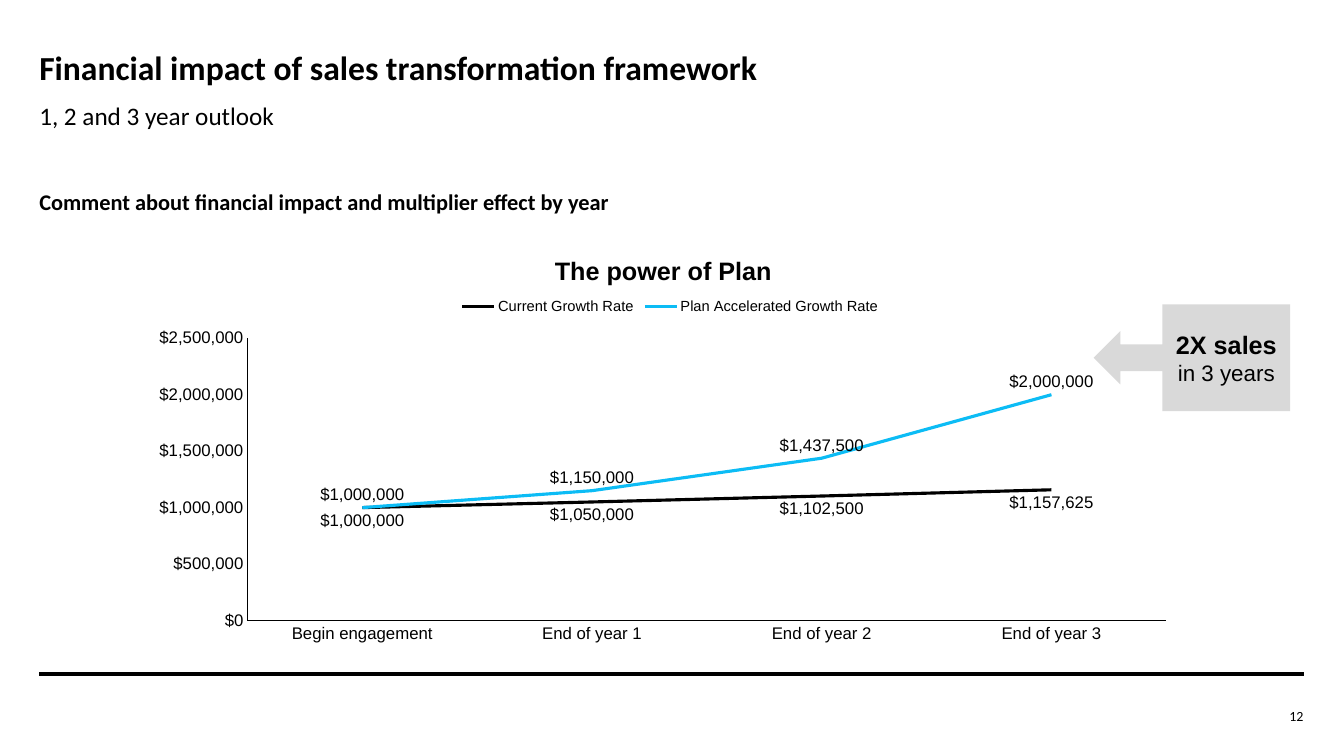
from lxml import etree
from pptx import Presentation
from pptx import util as u
from pptx.chart import data as cd
from pptx.dml import color
from pptx.enum import chart as ec
from pptx.enum import shapes, text
from pptx.oxml import ns

COLORS = {"ink": "000000", "accent": "0CBCF5", "callout": "D9D9D9"}
LEFT, WIDTH = 28.1, 903
MONEY = '"$"#,##0'
TEXTS = [
    (("Financial impact of sales transformation framework",), (LEFT, 33.8, WIDTH, 31.7),
     {"size": 24, "bold": True}, "LEFT", "TOP"),
    (("1, 2 and 3 year outlook",), (LEFT, 72, WIDTH, 31), {"size": 18}, "LEFT", "TOP"),
    (("Comment about financial impact and multiplier effect by year",),
     (LEFT, 134.6, WIDTH, 47.5), {"size": 16, "bold": True}, "LEFT", "TOP"),
    (("12",), (854.8, 503.3, 76.3, 15.8), {"size": 10}, "RIGHT", "MIDDLE"),
]
RULE_Y = 481.7
CALLOUT_BOX = (781.2, 217.4, 140.4, 76.3)
CALLOUT = [("2X sales ", {"size": 18, "bold": True}), ("in 3 years", {"size": 16, "bold": False})]
CHART_BOX = (102.2, 163.4, 745.9, 301)
CHART_TITLE = "The power of Plan"
CATEGORIES = ["Begin engagement", "End of year 1", "End of year 2", "End of year 3"]
SERIES = [
    ("Current Growth Rate", (1000000, 1050000, 1102500, 1157625), "ink", "BELOW"),
    ("Plan Accelerated Growth Rate", (1000000, 1150000, 1437500, 2000000), "accent", "ABOVE"),
]
TITLE_AT = {"x": 0.39, "y": 0.05}
LEGEND_AT = {"x": 0.3, "y": 0.16, "w": 0.41, "h": 0.05}
PLOT_AT = {"x": 0.1, "y": 0.26, "w": 0.88, "h": 0.67}


def rgb(name):
    """Return the named colour."""
    return color.RGBColor.from_string(COLORS[name])


def pts(values):
    """Turn numbers into point lengths."""
    return [u.Pt(v) for v in values]


def assign(obj, values):
    """Set attributes from a dict."""
    for key, value in values.items():
        setattr(obj, key, value)


def set_font(font, size, name="Arial", bold=False):
    """Format a font in the ink colour."""
    assign(font, {"size": u.Pt(size), "name": name, "bold": bold})
    font.color.rgb = rgb("ink")


def set_line(line, name, width):
    """Format a line."""
    line.color.rgb = rgb(name)
    line.width = u.Pt(width)


def place(layout, values, inner=False):
    """Give a chart part a manual position."""
    manual = etree.SubElement(layout, ns.qn("c:manualLayout"))
    modes = {"layoutTarget": "inner"} if inner else {}
    modes.update({"xMode": "edge", "yMode": "edge"})
    for key, value in {**modes, **values}.items():
        etree.SubElement(manual, ns.qn("c:" + key)).set("val", str(value))


def new_layout(before):
    """Insert a layout element ahead of a chart element."""
    layout = etree.Element(ns.qn("c:layout"))
    before.addprevious(layout)
    return layout


def add_text(slide, parts, box, fmt, align, anchor):
    """Add a text box without insets."""
    tf = slide.shapes.add_textbox(*pts(box)).text_frame
    assign(tf, {"word_wrap": True, "margin_left": 0, "margin_right": 0, "margin_top": 0,
                "margin_bottom": 0, "vertical_anchor": text.MSO_ANCHOR[anchor]})
    p = tf.paragraphs[0]
    p.alignment = text.PP_ALIGN[align]
    for part in parts:
        r = p.add_run()
        r.text = part
        set_font(r.font, name="Calibri", **fmt)


def add_growth_chart(slide):
    """Add the line chart of both growth rates."""
    data = cd.CategoryChartData(number_format=MONEY)
    data.categories = CATEGORIES
    for name, values, *_ in SERIES:
        data.add_series(name, values)
    chart = slide.shapes.add_chart(ec.XL_CHART_TYPE.LINE, *pts(CHART_BOX), data).chart
    set_font(chart.font, 10)
    chart.has_title = True
    title = chart.chart_title
    title.text_frame.text = CHART_TITLE
    set_font(title.text_frame.paragraphs[0].runs[0].font, 18, bold=True)
    chart.has_legend = True
    legend = chart.legend
    assign(legend, {"position": ec.XL_LEGEND_POSITION.TOP, "include_in_layout": False})
    set_font(legend.font, 10.5)
    for axis in (chart.category_axis, chart.value_axis):
        assign(axis, {"has_major_gridlines": False,
                      "major_tick_mark": ec.XL_TICK_MARK.NONE,
                      "minor_tick_mark": ec.XL_TICK_MARK.NONE})
        set_font(axis.tick_labels.font, 12)
        set_line(axis.format.line, "ink", 0.75)
    assign(chart.value_axis, {"minimum_scale": 0, "maximum_scale": 2500000, "major_unit": 500000})
    assign(chart.value_axis.tick_labels, {"number_format": MONEY, "number_format_is_linked": False})
    plot = chart.plots[0]
    plot.vary_by_categories = False
    for ser, (_, _, shade, position) in zip(plot.series, SERIES):
        ser.smooth = False
        ser.marker.style = ec.XL_MARKER_STYLE.NONE
        set_line(ser.format.line, shade, 2.25)
        labels = ser.data_labels
        assign(labels, {"show_value": True, "number_format": MONEY,
                        "number_format_is_linked": False,
                        "position": ec.XL_LABEL_POSITION[position]})
        set_font(labels.font, 12)
    root = chart.element
    for tag, values in (("title", TITLE_AT), ("legend", LEGEND_AT), ("plotArea", PLOT_AT)):
        part = root.find(".//" + ns.qn("c:" + tag))
        layout = part.find(ns.qn("c:layout"))
        if layout is None:
            follower = {"title": "overlay", "legend": "overlay", "plotArea": "lineChart"}[tag]
            layout = new_layout(part.find(ns.qn("c:" + follower)))
        place(layout, values, inner=tag == "plotArea")


def add_callout(slide):
    """Add the arrow callout beside the last point."""
    sp = slide.shapes.add_shape(shapes.MSO_SHAPE.LEFT_ARROW_CALLOUT, *pts(CALLOUT_BOX))
    sp.shadow.inherit = False
    sp.fill.solid()
    sp.fill.fore_color.rgb = rgb("callout")
    sp.line.fill.background()
    tf = sp.text_frame
    assign(tf, {"word_wrap": True, "vertical_anchor": text.MSO_ANCHOR.MIDDLE})
    p = tf.paragraphs[0]
    p.alignment = text.PP_ALIGN.CENTER
    for words, fmt in CALLOUT:
        r = p.add_run()
        r.text = words
        set_font(r.font, **fmt)


def main():
    """Build the slide and save it."""
    prs = Presentation()
    assign(prs, {"slide_width": u.Pt(960), "slide_height": u.Pt(540)})
    slide = prs.slides.add_slide(prs.slide_layouts[6])
    rule = slide.shapes.add_connector(
        shapes.MSO_CONNECTOR.STRAIGHT, *pts((LEFT, RULE_Y, LEFT + WIDTH, RULE_Y)))
    set_line(rule.line, "ink", 3)
    etree.SubElement(rule.element.spPr, ns.qn("a:effectLst"))
    for item in TEXTS:
        add_text(slide, *item)
    add_growth_chart(slide)
    add_callout(slide)
    prs.save("out.pptx")


if __name__ == "__main__":
    main()
